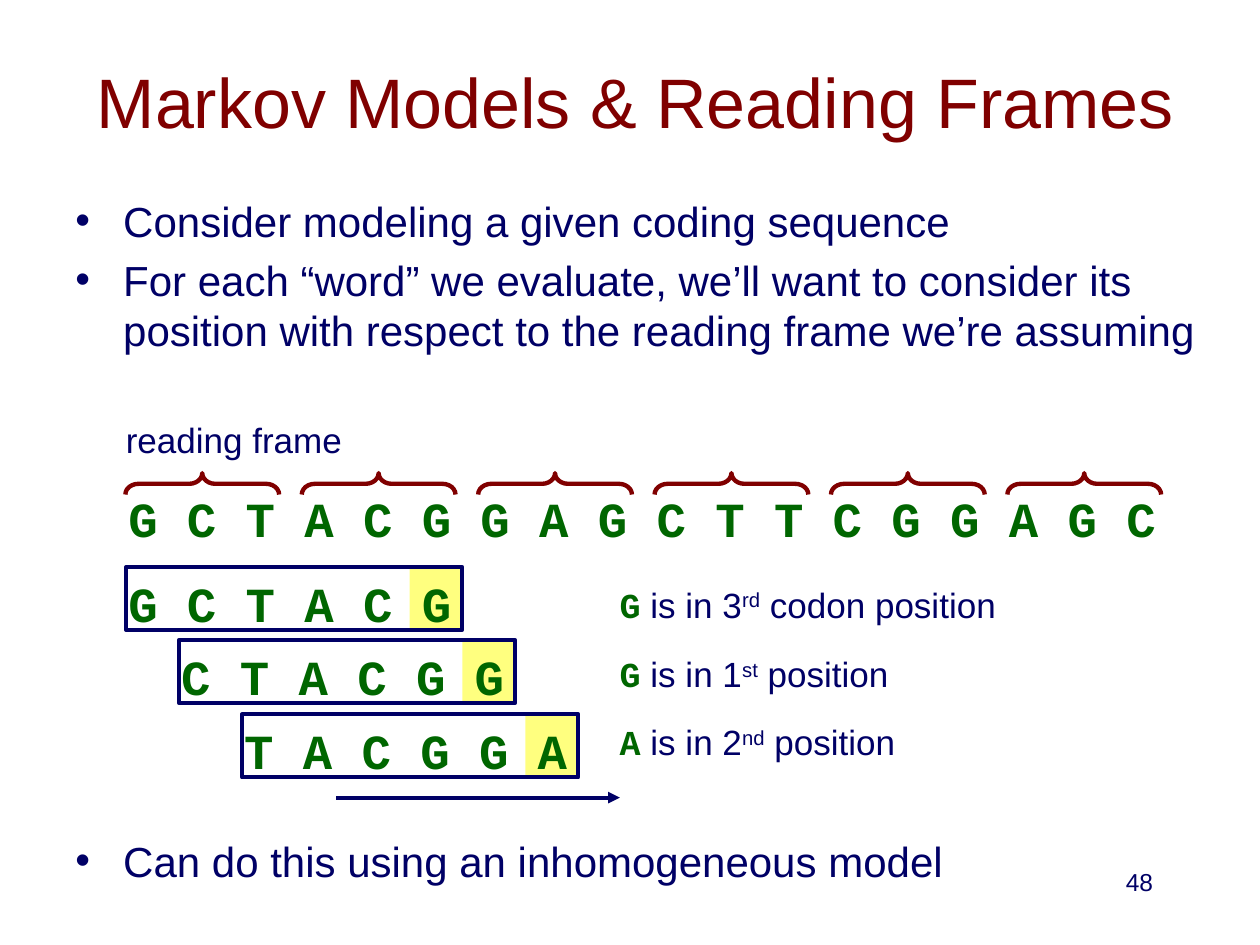
from lxml import etree
from pptx import Presentation
from pptx.dml.color import RGBColor
from pptx.enum import shapes, text
from pptx.oxml import ns
from pptx.util import Inches, Pt

NAVY, GREEN, MAROON, YELLOW = "000066", "006600", "800000", "FFFF00"
SANS, MONO = "Arial", "Courier New"


def color(value):
    return RGBColor.from_string(value)


def add_element(parent, tag, **attributes):
    return etree.SubElement(parent, ns.qn(tag), attributes)


def add_text(slide, box, paragraphs, size, font=SANS, fill=NAVY, bold=False,
             align=text.PP_ALIGN.LEFT, anchor=text.MSO_ANCHOR.TOP, wrap=True, bullet=False):
    shape = slide.shapes.add_textbox(*map(Inches, box))
    frame = shape.text_frame
    frame.word_wrap = wrap
    frame.vertical_anchor = anchor
    for index, runs in enumerate(paragraphs):
        paragraph = frame.add_paragraph() if index else frame.paragraphs[0]
        paragraph.alignment = align
        if bullet:
            paragraph.space_before = Pt(5)
            properties = paragraph._p.get_or_add_pPr()
            properties.set("marL", str(Inches(0.38)))
            properties.set("indent", str(Inches(-0.38)))
            add_element(properties, "a:buFont", typeface=SANS)
            add_element(properties, "a:buChar", char="•")
        for content, changes in [(runs, {})] if isinstance(runs, str) else runs:
            style = {"font": font, "fill": fill, "bold": bold, **changes}
            run = paragraph.add_run()
            run.text = content
            run.font.size = Pt(size)
            run.font.name = style["font"]
            run.font.bold = style["bold"]
            run.font.color.rgb = color(style["fill"])
            if "baseline" in style:
                run.font._element.set("baseline", style["baseline"])
    return shape


def add_shape(slide, kind, box, fill=None, line=None, width=2.25):
    shape = slide.shapes.add_shape(kind, *map(Inches, box))
    shape.shadow.inherit = False
    if fill:
        shape.fill.solid()
        shape.fill.fore_color.rgb = color(fill)
    else:
        shape.fill.background()
    if line:
        shape.line.color.rgb = color(line)
        shape.line.width = Pt(width)
    else:
        shape.line.fill.background()
    return shape


def add_sequence(slide, box, letters):
    add_text(slide, box, [" ".join(letters)], 28, font=MONO, fill=GREEN, bold=True, wrap=False)


def add_reading_frame(slide, left, top, letters):
    add_text(slide, (left - 0.02, top, 2.1, 0.43), ["reading frame"], 20)
    add_sequence(slide, (left, top + 0.56, 8.37, 0.57), letters)
    for codon in range(len(letters) // 3):
        brace = add_shape(slide, shapes.MSO_SHAPE.LEFT_BRACE,
                          (left + 0.6 + 1.4 * codon, top - 0.04, 0.17, 1.22),
                          line=MAROON, width=2.5)
        brace.rotation = 90
        brace.adjustments[0] = 0.61


def add_window(slide, left, top, letters):
    highlight = add_shape(slide, shapes.MSO_SHAPE.RECTANGLE,
                          (left + 2.25, top, 0.42, 0.5), fill=YELLOW)
    fill_color = highlight.fill._xPr.find(".//" + ns.qn("a:srgbClr"))
    add_element(fill_color, "a:alpha", val="50000")
    add_shape(slide, shapes.MSO_SHAPE.RECTANGLE, (left, top, 2.67, 0.5), line=NAVY)
    add_sequence(slide, (left - 0.08, top, 2.77, 0.57), letters)


def add_position_note(slide, box, letter, number, suffix, ending):
    runs = [(letter, {"font": MONO, "fill": GREEN, "bold": True}),
            (f" is in {number}", {}), (suffix, {"baseline": "30000"}), (ending, {})]
    add_text(slide, box, [runs], 20, wrap=False)


def add_arrow(slide, left, top, length):
    arrow = slide.shapes.add_connector(shapes.MSO_CONNECTOR.STRAIGHT, Inches(left), Inches(top),
                                       Inches(left + length), Inches(top))
    arrow.line.color.rgb = color(NAVY)
    arrow.line.width = Pt(2.25)
    add_element(arrow.line._get_or_add_ln(), "a:tailEnd", type="triangle")
    add_element(arrow._element.spPr, "a:effectLst")


def main():
    presentation = Presentation()
    presentation.slide_width, presentation.slide_height = Inches(10), Inches(7.5)
    slide = presentation.slides.add_slide(presentation.slide_layouts[6])
    add_text(slide, (0.58, 0.17, 8.92, 1.25), ["Markov Models & Reading Frames"], 40, fill=MAROON,
             align=text.PP_ALIGN.CENTER, anchor=text.MSO_ANCHOR.MIDDLE)
    add_text(slide, (0.5, 1.5, 9.17, 1.83), [
        "Consider modeling a given coding sequence",
        "For each “word” we evaluate, we’ll want to consider its position "
        "with respect to the reading frame we’re assuming",
    ], 24, bullet=True)

    sequence = "GCTACGGAGCTTCGGAGC"
    add_reading_frame(slide, 0.92, 3.27, sequence)
    windows = [
        (1, 4.5, 4.58, 3.2, "3", "rd", " codon position"),
        (1.42, 5.08, 5.13, 2.35, "1", "st", " position"),
        (1.92, 5.67, 5.67, 2.41, "2", "nd", " position"),
    ]
    for start, (left, top, note_top, note_width, *note) in enumerate(windows):
        letters = sequence[start:start + 6]
        add_window(slide, left, top, letters)
        add_position_note(slide, (4.82, note_top, note_width, 0.43), letters[-1], *note)
    add_arrow(slide, 2.67, 6.33, 2.25)

    add_text(slide, (0.5, 6.58, 8.5, 0.6), ["Can do this using an inhomogeneous model"],
             24, bullet=True)
    add_text(slide, (7.17, 6.83, 2.08, 0.5), ["48"], 14, align=text.PP_ALIGN.RIGHT)
    presentation.save("out.pptx")


if __name__ == "__main__":
    main()
